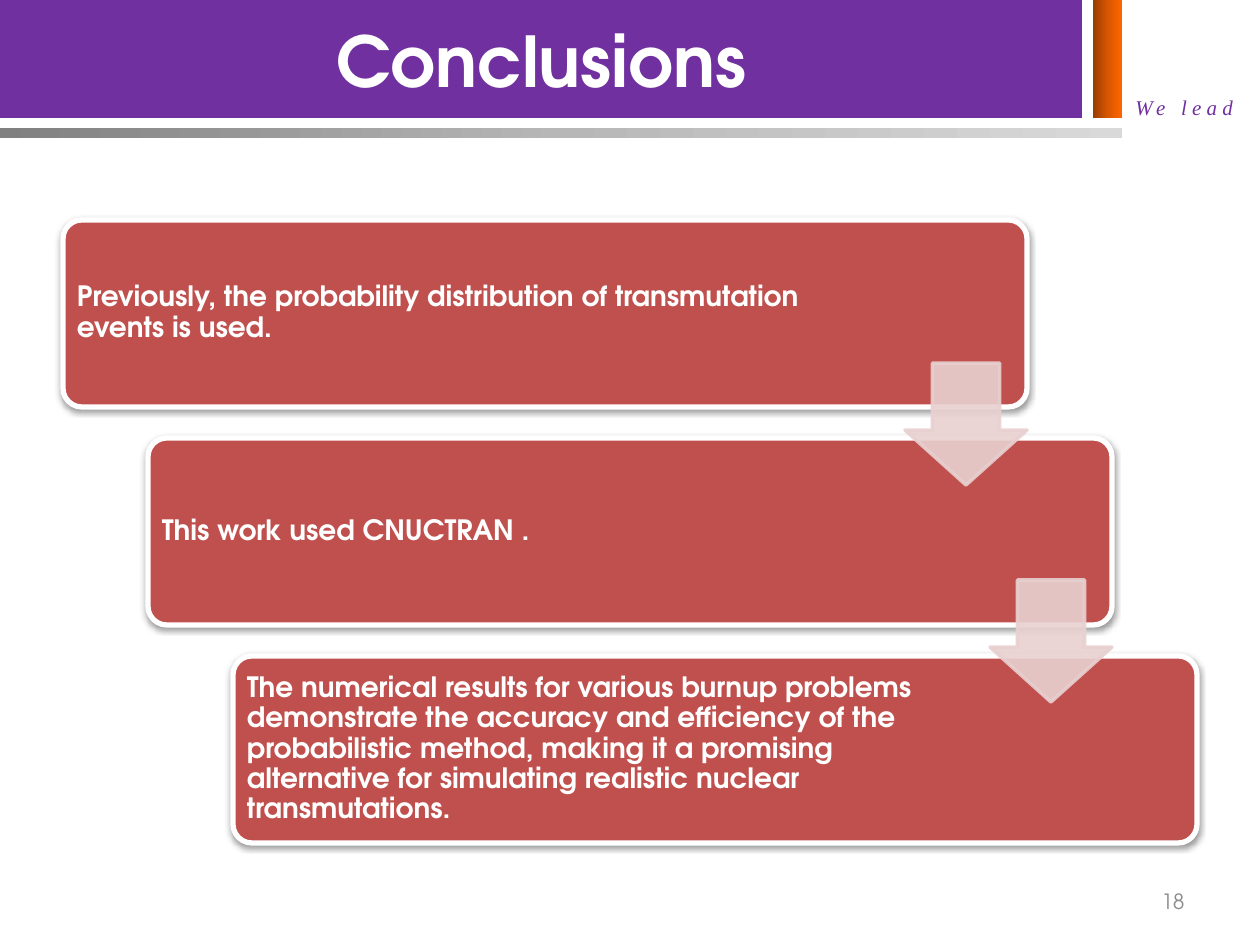
import pptx
import pptx.dml.color
import pptx.enum.shapes
import pptx.enum.text
import pptx.oxml.ns
import pptx.util
from lxml import etree

SCALE = 914400 / 126
FONT = "TeX Gyre Adventor"
SHAPE = pptx.enum.shapes.MSO_SHAPE
ALIGN = pptx.enum.text.PP_ALIGN
ANCHOR = pptx.enum.text.MSO_ANCHOR
COLORS = {
    "purple": "7030A0",
    "white": "FFFFFF",
    "red": "C0504D",
    "arrow": "E8D0D0",
    "number": "8C8C8C",
    "shadow": "000000",
}
ORANGES = ["973C00", "D75600", "FF6600"]
GRAYS = ["808080", "B7B7B7", "D9D9D9"]
STEPS = [
    ("Previously, the probability distribution of transmutation events is used.", 762),
    ("This work used CNUCTRAN .", 746),
    ("The numerical results for various burnup problems demonstrate the accuracy "
     "and efficiency of the probabilistic method, making it a promising alternative "
     "for simulating realistic nuclear transmutations.", 746),
]


def px(n):
    """Turn pixels into EMU."""
    return pptx.util.Emu(round(n * SCALE))


def rgb(name):
    """Look up a named colour."""
    return pptx.dml.color.RGBColor.from_string(COLORS[name])


def sub(parent, tag, **attrs):
    """Append a drawing element with the given attributes."""
    values = {key: str(value) for key, value in attrs.items()}
    return etree.SubElement(parent, pptx.oxml.ns.qn(tag), values)


def add_shape(s, kind, box, color=None, line=None, width=0):
    """Add a flat preset shape, optionally filled and outlined."""
    sp = s.shapes.add_shape(kind, *map(px, box))
    sp.shadow.inherit = False
    if color:
        sp.fill.solid()
        sp.fill.fore_color.rgb = rgb(color)
    if line:
        sp.line.color.rgb = rgb(line)
        sp.line.width = pptx.util.Pt(width)
    else:
        sp.line.fill.background()
    return sp


def add_gradient_bar(s, box, stops):
    """Add a bar that shades from left to right."""
    sp = add_shape(s, SHAPE.RECTANGLE, box)
    sp.fill.gradient()
    sp.fill.gradient_angle = 0
    stop_list = sp._element.spPr.find(".//" + pptx.oxml.ns.qn("a:gsLst"))
    for old in list(stop_list):
        stop_list.remove(old)
    for i, color in enumerate(stops):
        sub(sub(stop_list, "a:gs", pos=50000 * i), "a:srgbClr", val=color)


def write(sp, text, size, color, font=FONT, bold=False, italic=False,
          align=ALIGN.LEFT, anchor=ANCHOR.MIDDLE):
    """Write one formatted run into a shape and return its paragraph and run."""
    tf = sp.text_frame
    tf.word_wrap = True
    tf.auto_size = pptx.enum.text.MSO_AUTO_SIZE.NONE
    tf.vertical_anchor = anchor
    p = tf.paragraphs[0]
    p.alignment = align
    r = p.add_run()
    r.text = text
    r.font.name = font
    r.font.size = pptx.util.Pt(size)
    r.font.bold = bold
    r.font.italic = italic
    r.font.color.rgb = rgb(color)
    return p, r


def add_text(s, box, *args, **kwargs):
    """Add a text box holding one formatted run."""
    sp = s.shapes.add_textbox(*map(px, box))
    return sp, *write(sp, *args, **kwargs)


def add_header(s):
    """Draw the header bars, the motto and the title."""
    add_shape(s, SHAPE.RECTANGLE, (0, 0, 1082, 118), "purple")
    add_gradient_bar(s, (1093, 0, 29, 118), ORANGES)
    _, _, r = add_text(s, (1123, 88, 137, 38), "We lead", 12, "purple",
                       font="Times New Roman", italic=True, anchor=ANCHOR.TOP)
    r._r.get_or_add_rPr().set("spc", "300")
    add_gradient_bar(s, (0, 128, 1122, 10), GRAYS)
    title = s.shapes.title
    title.left, title.top, title.width, title.height = map(px, (0, 0, 1082, 118))
    write(title, "Conclusions", 40, "white", bold=True, align=ALIGN.CENTER)
    s.shapes._spTree.append(title._element)


def add_step(s, left, top, text, text_width):
    """Add a rounded card with a soft shadow and its text."""
    card = add_shape(s, SHAPE.ROUNDED_RECTANGLE, (left, top, 964, 187), "red", "white", 3)
    card.adjustments[0] = 0.1
    effects = card._element.spPr.find(pptx.oxml.ns.qn("a:effectLst"))
    shadow = sub(effects, "a:outerShdw", blurRad=40000, dist=20000, dir=5400000, rotWithShape=0)
    sub(sub(shadow, "a:srgbClr", val=COLORS["shadow"]), "a:alpha", val=38000)
    sp, p, _ = add_text(s, (left + 5, top + 5, text_width, 176), text, 16, "white", bold=True)
    tf = sp.text_frame
    tf.margin_left = tf.margin_right = tf.margin_top = tf.margin_bottom = px(9)
    p.line_spacing = 0.9


def add_arrow(s, left, top):
    """Add a translucent arrow leading to the next card."""
    sp = add_shape(s, SHAPE.DOWN_ARROW, (left, top, 122, 122), "arrow", "arrow", 2)
    sp.adjustments[0] = 0.55
    sp.adjustments[1] = 0.45
    for color in sp._element.spPr.iter(pptx.oxml.ns.qn("a:srgbClr")):
        sub(color, "a:alpha", val=90000)


def main():
    """Build the slide and save it."""
    prs = pptx.Presentation()
    prs.slide_width, prs.slide_height = px(1260), px(945)
    s = prs.slides.add_slide(prs.slide_layouts[5])
    add_header(s)
    add_text(s, (903, 876, 294, 50), "18", 12, "number", align=ALIGN.RIGHT)
    for i, (text, text_width) in enumerate(STEPS):
        add_step(s, 63 + 85 * i, 220 + 218 * i, text, text_width)
    for i in range(len(STEPS) - 1):
        add_arrow(s, 905 + 85 * i, 363 + 217 * i)
    prs.save("out.pptx")


if __name__ == "__main__":
    main()
